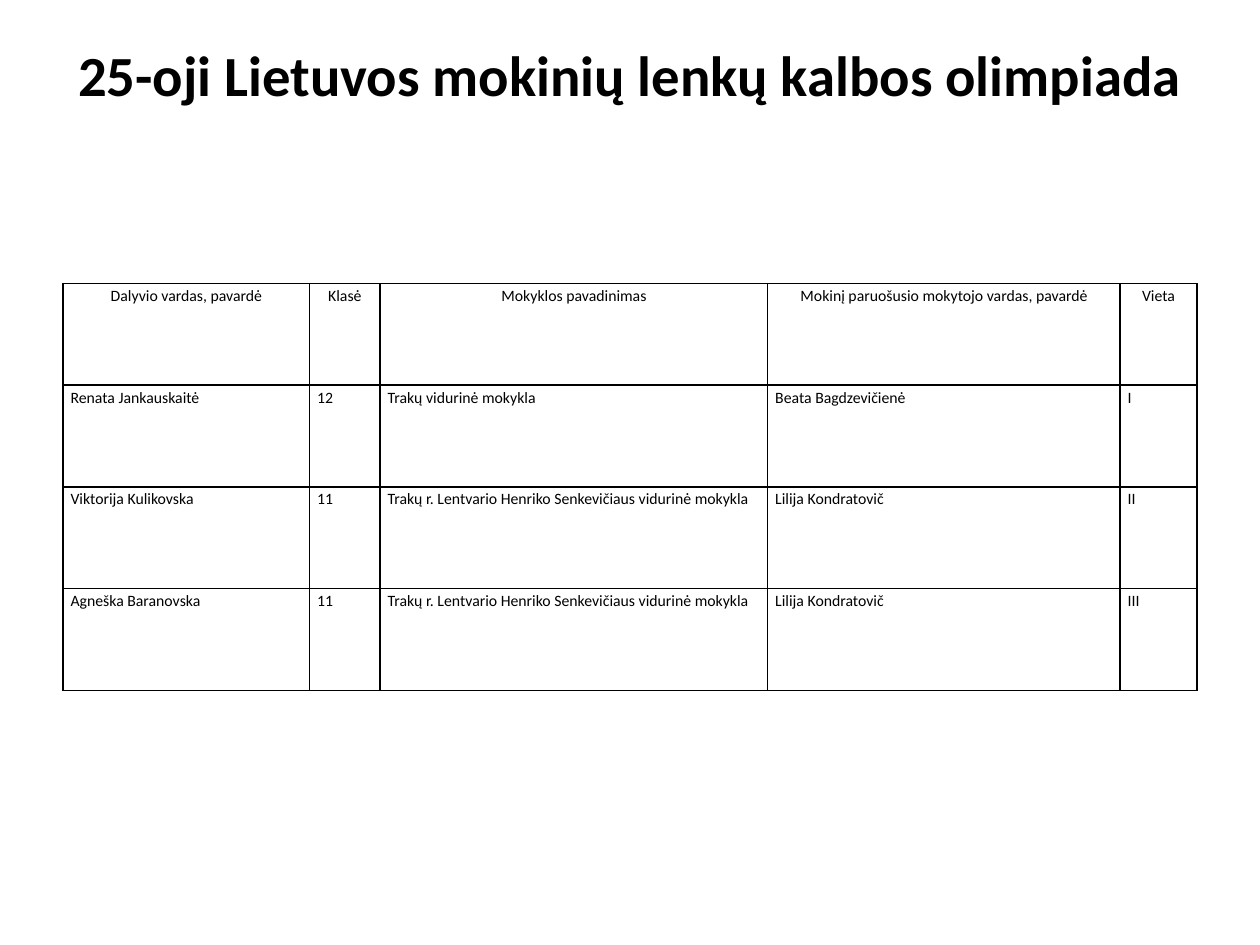
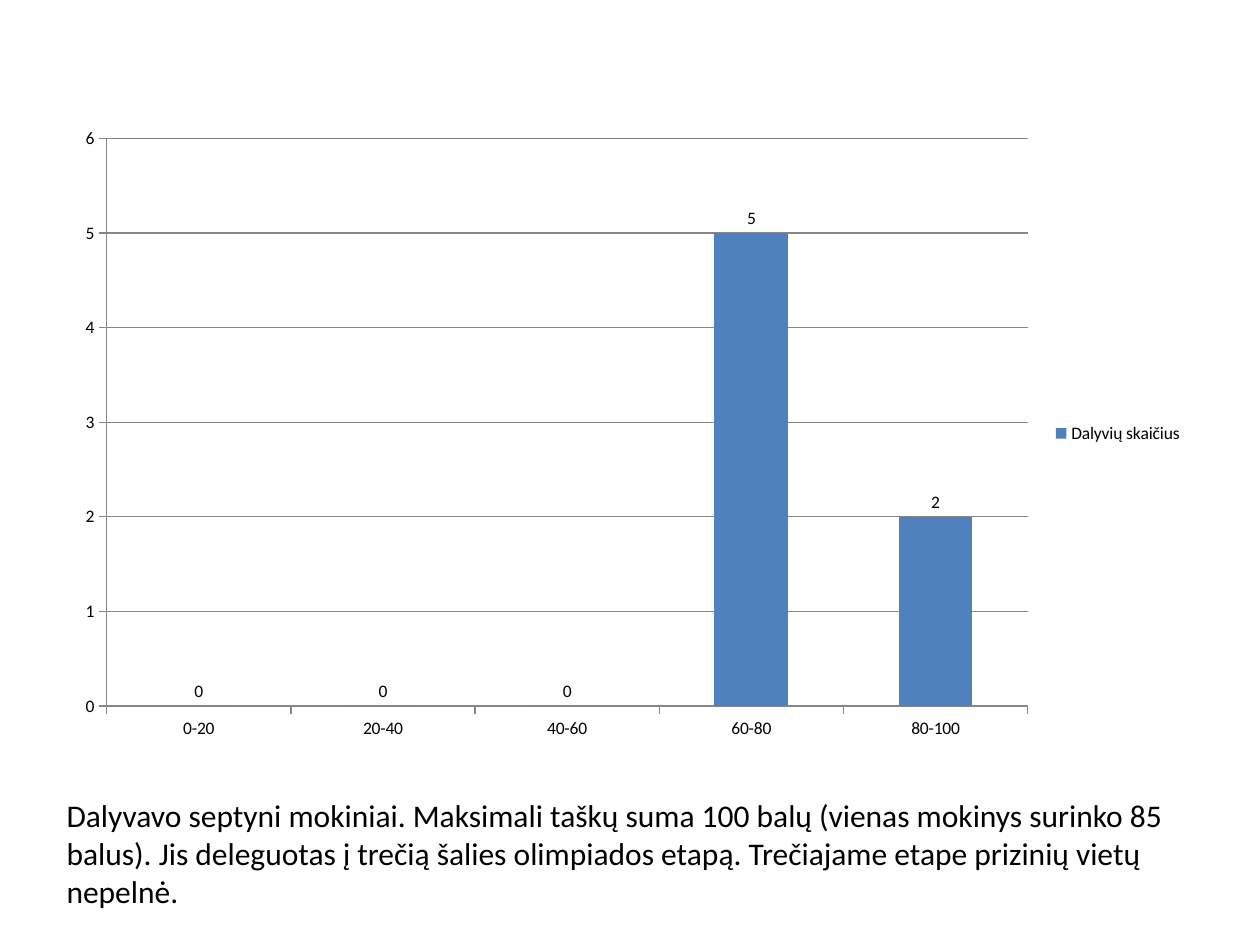
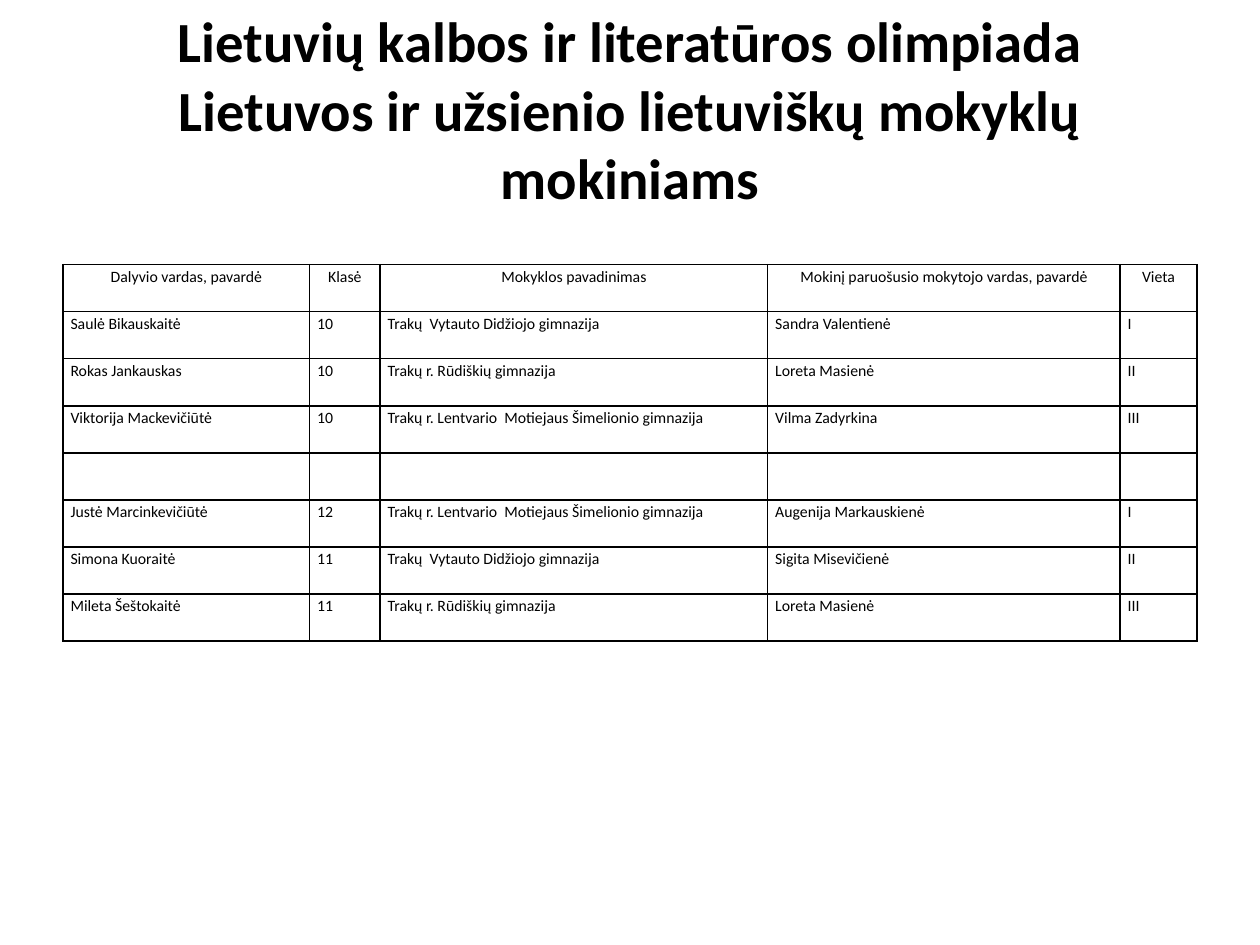
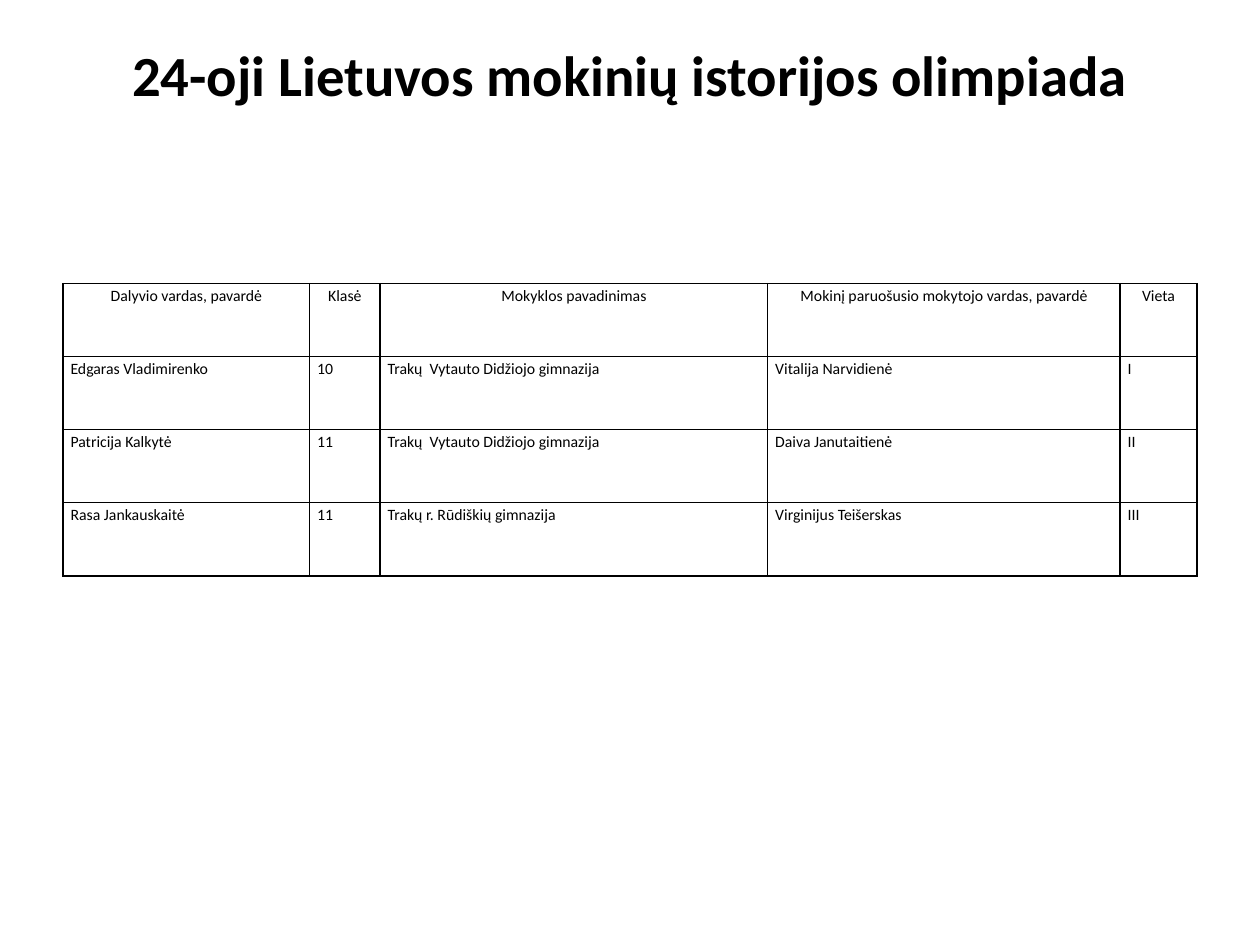
from pptx import Presentation
from pptx.chart.data import CategoryChartData
from pptx.dml.color import RGBColor
from pptx.enum.chart import XL_CHART_TYPE, XL_LABEL_POSITION, XL_LEGEND_POSITION, XL_TICK_MARK
from pptx.enum.text import MSO_ANCHOR, PP_ALIGN
from pptx.oxml import parse_xml
from pptx.oxml.ns import nsdecls
from pptx.util import Inches, Pt

COLORS = {"text": "000000", "border": "000000", "grid": "868686",
          "blue": "4F81BD", "red": "C0504D", "green": "9BBB59"}
FONT = "Calibri"
TITLE_SIZE, CELL_SIZE, CHART_SIZE, NOTE_SIZE = 32.4, 9, 10, 18
LEFT, WIDTH = 0.5, 9
TITLE_AREA = (LEFT, 0.3, WIDTH, 1.25)
TITLE_LIFT = 0.72
CHART_AREA = (LEFT, 0.92, 8.99, 5.04)
NOTE_AREA = (0.43, 6.27, 9.57, 1.31)
COLUMNS = [1.96, 0.56, 3.08, 2.8, 0.61]

HEADER = ("Dalyvio vardas, pavardė", "Klasė", "Mokyklos pavadinimas",
          "Mokinį paruošusio mokytojo vardas, pavardė", "Vieta")
VYTAUTAS = "Trakų  Vytauto Didžiojo gimnazija"
RUDISKES = "Trakų r. Rūdiškių gimnazija"
SIMELIONIS = "Trakų r. Lentvario  Motiejaus Šimelionio gimnazija"
SENKEVICIUS = "Trakų r. Lentvario Henriko Senkevičiaus vidurinė mokykla"

POLISH = {
    "title": "25-oji Lietuvos mokinių lenkų kalbos olimpiada",
    "lift": TITLE_LIFT, "top": 2.25, "height": 3.23,
    "rows": [
        ("Renata Jankauskaitė", "12", "Trakų vidurinė mokykla", "Beata Bagdzevičienė", "I"),
        ("Viktorija Kulikovska", "11", SENKEVICIUS, "Lilija Kondratovič", "II"),
        ("Agneška Baranovska", "11", SENKEVICIUS, "Lilija Kondratovič", "III"),
    ],
}
LITHUANIAN = {
    "title": "Lietuvių kalbos ir literatūros olimpiada Lietuvos ir užsienio "
             "lietuviškų mokyklų mokiniams",
    "lift": 0.18, "top": 2.1, "height": 2.99,
    "rows": [
        ("Saulė Bikauskaitė", "10", VYTAUTAS, "Sandra Valentienė", "I"),
        ("Rokas Jankauskas", "10", RUDISKES, "Loreta Masienė", "II"),
        ("Viktorija Mackevičiūtė", "10", SIMELIONIS, "Vilma Zadyrkina", "III"),
        ("",) * len(COLUMNS),
        ("Justė Marcinkevičiūtė", "12", SIMELIONIS, "Augenija Markauskienė", "I"),
        ("Simona Kuoraitė", "11", VYTAUTAS, "Sigita Misevičienė", "II"),
        ("Mileta Šeštokaitė", "11", RUDISKES, "Loreta Masienė", "III"),
    ],
}
HISTORY = {
    "title": "24-oji Lietuvos mokinių istorijos olimpiada",
    "lift": TITLE_LIFT, "top": 2.25, "height": 2.32,
    "rows": [
        ("Edgaras Vladimirenko", "10", VYTAUTAS, "Vitalija Narvidienė", "I"),
        ("Patricija Kalkytė", "11", VYTAUTAS, "Daiva Janutaitienė", "II"),
        ("Rasa Jankauskaitė", "11", RUDISKES, "Virginijus Teišerskas", "III"),
    ],
}
SCORES = {
    "ranges": ["0-20", "20-40", "40-60", "60-80", "80-100"],
    "series": [
        ("Dalyvių skaičius", [0, 0, 0, 5, 2], "blue"),
        ("Stulpelis1", [], "red"),
        ("Stulpelis2", [], "green"),
    ],
    "note": "Dalyvavo septyni mokiniai. Maksimali taškų suma 100 balų (vienas mokinys "
            "surinko 85 balus). Jis deleguotas į trečią šalies olimpiados etapą. "
            "Trečiajame etape prizinių vietų nepelnė.",
}


def inches(area):
    return [Inches(length) for length in area]


def color(name):
    return RGBColor.from_string(COLORS[name])


def style_font(font, size, bold=False):
    font.name = FONT
    font.size = Pt(size)
    font.bold = bold
    font.color.rgb = color("text")


def add_title(page, text, lift):
    title = page.shapes.title
    title.left, title.top, title.width, title.height = inches(TITLE_AREA)
    frame = title.text_frame
    frame.text = text
    frame.vertical_anchor = MSO_ANCHOR.MIDDLE
    frame.margin_bottom = Inches(lift)
    para = frame.paragraphs[0]
    para.alignment = PP_ALIGN.CENTER
    style_font(para.font, TITLE_SIZE, bold=True)


def add_borders(cell):
    properties = cell._tc.get_or_add_tcPr()
    for side in ("lnL", "lnR", "lnT", "lnB"):
        properties.append(parse_xml(
            f'<a:{side} {nsdecls("a")} w="{Pt(1)}"><a:solidFill>'
            f'<a:srgbClr val="{COLORS["border"]}"/></a:solidFill></a:{side}>'))


def fill_cell(cell, text, alignment):
    cell.margin_left = cell.margin_right = Inches(0.06)
    cell.margin_top = cell.margin_bottom = 0
    cell.text = text
    para = cell.text_frame.paragraphs[0]
    para.alignment = alignment
    para.line_spacing = 1.15
    style_font(para.font, CELL_SIZE)
    add_borders(cell)
    cell.fill.background()


def add_results(page, top, height, results):
    rows = [HEADER, *results]
    area = inches((LEFT, top, WIDTH, height))
    table = page.shapes.add_table(len(rows), len(COLUMNS), *area).table
    table.first_row = table.horz_banding = False
    for column, share in zip(table.columns, COLUMNS):
        column.width = Inches(WIDTH * share / sum(COLUMNS))
    for row_index, row in enumerate(rows):
        table.rows[row_index].height = Inches(height / len(rows))
        alignment = PP_ALIGN.LEFT if row_index else PP_ALIGN.CENTER
        for column_index, text in enumerate(row):
            fill_cell(table.cell(row_index, column_index), text, alignment)


def add_results_page(deck, olympiad):
    page = deck.slides.add_slide(deck.slide_layouts[5])
    add_title(page, olympiad["title"], olympiad["lift"])
    add_results(page, olympiad["top"], olympiad["height"], olympiad["rows"])


def style_series(series, counts, fill):
    series.format.fill.solid()
    series.format.fill.fore_color.rgb = color(fill)
    if counts:
        series.data_labels.show_value = True
        series.data_labels.position = XL_LABEL_POSITION.OUTSIDE_END
    else:
        series._element.remove(series._element.val)


def add_score_chart(page):
    data = CategoryChartData()
    data.categories = SCORES["ranges"]
    for name, counts, fill in SCORES["series"]:
        data.add_series(name, counts)
    chart = page.shapes.add_chart(
        XL_CHART_TYPE.COLUMN_CLUSTERED, *inches(CHART_AREA), data).chart
    style_font(chart.font, CHART_SIZE)
    chart.has_title = False
    chart.has_legend = True
    chart.legend.position = XL_LEGEND_POSITION.RIGHT
    chart.legend.include_in_layout = False

    plot = chart.plots[0]
    plot.gap_width = 150
    plot.vary_by_categories = False
    for series, (name, counts, fill) in zip(plot.series, SCORES["series"]):
        style_series(series, counts, fill)

    chart.value_axis.has_major_gridlines = True
    for axis in (chart.category_axis, chart.value_axis):
        axis.major_tick_mark = XL_TICK_MARK.OUTSIDE
        axis.format.line.color.rgb = color("grid")
    chart.value_axis.major_gridlines.format.line.color.rgb = color("grid")


def add_score_page(deck):
    page = deck.slides.add_slide(deck.slide_layouts[6])
    add_score_chart(page)
    frame = page.shapes.add_textbox(*inches(NOTE_AREA)).text_frame
    frame.word_wrap = True
    frame.text = SCORES["note"]
    style_font(frame.paragraphs[0].font, NOTE_SIZE)


def main():
    deck = Presentation()
    deck.slide_width, deck.slide_height = inches((10, 7.5))
    add_results_page(deck, POLISH)
    add_score_page(deck)
    add_results_page(deck, LITHUANIAN)
    add_results_page(deck, HISTORY)
    deck.save("out.pptx")


if __name__ == "__main__":
    main()
